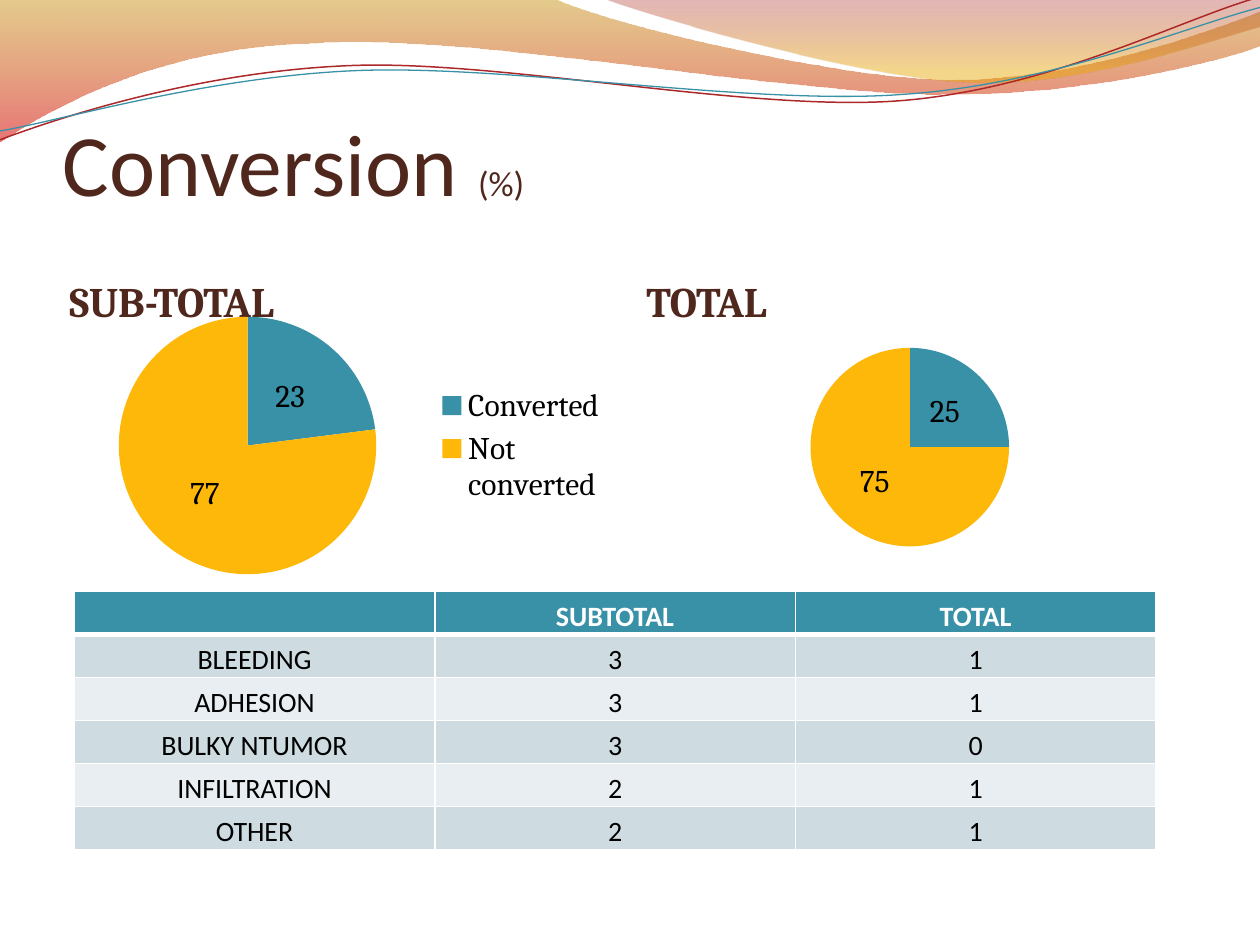
from lxml.etree import SubElement
from pptx import Presentation
from pptx.chart.data import CategoryChartData
from pptx.dml.color import RGBColor
from pptx.enum.chart import XL_CHART_TYPE, XL_LABEL_POSITION, XL_LEGEND_POSITION
from pptx.enum.text import MSO_ANCHOR, PP_ALIGN
from pptx.oxml import parse_xml
from pptx.oxml.ns import nsdecls, qn
from pptx.util import Pt

COLORS = {
    "teal": "3891A7", "amber": "FEB80A", "brown": "4F271C", "red": "AC2829",
    "row_dark": "CEDCE1", "row_light": "E8EEF1", "white": "FFFFFF", "black": "000000",
    "ochre": "C38B00", "scarlet": "D60305", "wine": "A11112", "gold": "E9A600",
}

# Each outline is a start point, then segments: one point is a line,
# three points are a cubic curve (two controls and an end).
BANDS = [
    {"start": (0, 0),
     "segments": [
         [(316.8, -0.7)],
         [(342.7, 12.2), (478.1, 45.4), (545.8, 45.4)],
         [(614.2, 45.4), (689.8, 18.7), (720, 6.5)],
         [(720.7, 25.9)],
         [(707.8, 31.7), (626.4, 54.7), (537.1, 54)],
         [(447.8, 54), (275, 20.2), (185, 24.5)],
         [(92.9, 25.9), (33.1, 59.8), (-0.7, 81.4)]],
     "stops": [(0, "ochre", 45), (1, "scarlet", 55)]},
    {"start": (344.9, -0.7),
     "segments": [
         [(366.5, 7.9), (491, 44.6), (553.7, 46.8)],
         [(616.3, 49.7), (691.9, 23), (720, 15.1)],
         [(720, 0)]],
     "stops": [(0, "wine", 30), (0.8, "gold", 45)]},
]
WAVE_TILT = -2.7
WAVES = [
    {"start": (-1.4, 62.9), "color": "red", "width": 0.85,
     "segments": [
         [(33.7, 51.6), (114, 29.4), (199.8, 30)],
         [(284.8, 30.3), (425.8, 67.2), (512.4, 64.9)],
         [(599, 62.4), (676.4, 25.7), (720.2, 15.6)]]},
    {"start": (-1.2, 57.9), "color": "teal", "width": 0.75,
     "segments": [
         [(33, 53.8), (118.3, 32.5), (204, 33)],
         [(290.5, 33.5), (428.9, 63.8), (515.5, 61.3)],
         [(601.3, 59.6), (678.5, 30.1), (721.4, 21.3)]]},
]

LEFT, RIGHT, HALF_WIDTH = 36, 365.8, 318.2
TITLE = [("Conversion ", 50), ("(%)", 20)]
HEADINGS = [("SUB-TOTAL", LEFT), ("TOTAL", RIGHT)]
PIES = [
    {"box": (LEFT, 171.1, HALF_WIDTH, 167), "legend": True, "plot": None,
     "categories": ["Converted", "Not converted"], "values": [23, 77]},
    {"box": (RIGHT, 179.3, HALF_WIDTH, 136), "legend": False,
     "plot": (6, 19.5, 296.2, 113.5),
     "categories": ["1", "2"], "values": [25, 75]},
]
REASONS = [
    ("", "SUBTOTAL", "TOTAL"),
    ("BLEEDING", "3", "1"),
    ("ADHESION", "3", "1"),
    ("BULKY NTUMOR", "3", "0"),
    ("INFILTRATION", "2", "1"),
    ("OTHER", "2", "1"),
]
TABLE_LEFT, TABLE_TOP, COLUMN_WIDTH, ROW_HEIGHT = 42.5, 337.9, 206, 24.6


def rgb(name):
    return RGBColor.from_string(COLORS[name])


def add_outline(slide, outline, close):
    """Build the outline through all its points, then join each three into a curve."""
    segments = outline["segments"]
    x, y = outline["start"]
    builder = slide.shapes.build_freeform(Pt(x), Pt(y))
    builder.add_line_segments([(Pt(x), Pt(y)) for segment in segments for x, y in segment],
                              close=close)
    shape = builder.convert_to_shape()
    shape.shadow.inherit = False
    lines = iter(list(shape._element.iter(qn("a:lnTo"))))
    for segment in segments:
        first, *others = [next(lines) for _ in segment]
        if others:
            first.tag = qn("a:cubicBezTo")
            for line in others:
                first.append(line[0])
                line.getparent().remove(line)
    return shape


def add_band(slide, band):
    shape = add_outline(slide, band, close=True)
    shape.line.fill.background()
    shape.fill.gradient()
    shape.fill.gradient_angle = 270
    for stop, (position, color, _) in zip(shape.fill.gradient_stops, band["stops"]):
        stop.position = position
        stop.color.rgb = rgb(color)
    for color_xml, (_, _, opacity) in zip(shape._element.iter(qn("a:srgbClr")), band["stops"]):
        SubElement(color_xml, qn("a:alpha"), val=str(opacity * 1000))


def add_wave(slide, wave):
    shape = add_outline(slide, wave, close=False)
    shape.rotation = WAVE_TILT
    shape.fill.background()
    shape.line.color.rgb = rgb(wave["color"])
    shape.line.width = Pt(wave["width"])


def add_run(paragraph, text, size, font, color, bold=False):
    run = paragraph.add_run()
    run.text = text
    run.font.size, run.font.name, run.font.bold = Pt(size), font, bold
    run.font.color.rgb = rgb(color)


def add_text(slide, box, runs, font, anchor, insets, bold=False):
    frame = slide.shapes.add_textbox(*map(Pt, box)).text_frame
    frame.word_wrap = True
    frame.vertical_anchor = anchor
    frame.margin_left, frame.margin_top, frame.margin_right, frame.margin_bottom = map(Pt, insets)
    for text, size in runs:
        add_run(frame.paragraphs[0], text, size, font, "brown", bold)


def place_plot(chart, plot_box, chart_box):
    """Fix the inner plot area, given in points from the chart's corner."""
    area = chart._chartSpace.find(".//" + qn("c:plotArea"))
    for old in area.findall(qn("c:layout")):
        area.remove(old)
    width, height = chart_box[2:]
    shares = [length / whole for length, whole in zip(plot_box, (width, height) * 2)]
    settings = [("layoutTarget", "inner"), ("xMode", "edge"), ("yMode", "edge"),
                *zip("xywh", shares)]
    inner = "".join(f'<c:{tag} val="{value}"/>' for tag, value in settings)
    area.insert(0, parse_xml(f'<c:layout {nsdecls("c")}><c:manualLayout>{inner}'
                             "</c:manualLayout></c:layout>"))


def add_pie(slide, pie):
    data = CategoryChartData()
    data.categories = pie["categories"]
    data.add_series("Series 1", pie["values"])
    chart = slide.shapes.add_chart(XL_CHART_TYPE.PIE, *map(Pt, pie["box"]), data).chart
    chart.has_title = False
    chart.font.size, chart.font.name = Pt(18), "Cambria"
    chart.font.color.rgb = rgb("black")
    chart.has_legend = pie["legend"]
    if pie["legend"]:
        chart.legend.position = XL_LEGEND_POSITION.RIGHT
        chart.legend.include_in_layout = False
    plot = chart.plots[0]
    plot.vary_by_categories = True
    plot.has_data_labels = True
    plot.data_labels.show_value = True
    plot.data_labels.show_percentage = False
    plot.data_labels.position = XL_LABEL_POSITION.CENTER
    for index, color in enumerate(("teal", "amber")):
        fill = plot.series[0].points[index].format.fill
        fill.solid()
        fill.fore_color.rgb = rgb(color)
    if pie["plot"]:
        place_plot(chart, pie["plot"], pie["box"])


def style_cell(cell, text, row):
    header = row == 0
    widths = {"L": 1, "R": 1, "T": 3 if row == 1 else 1, "B": 3 if header else 1}
    properties = cell._tc.get_or_add_tcPr()
    for side, width in widths.items():
        border = SubElement(properties, qn(f"a:ln{side}"), w=str(Pt(width)))
        SubElement(SubElement(border, qn("a:solidFill")), qn("a:srgbClr"), val=COLORS["white"])
    cell.fill.solid()
    cell.fill.fore_color.rgb = rgb("teal" if header else "row_dark" if row % 2 else "row_light")
    cell.vertical_anchor = MSO_ANCHOR.BOTTOM
    cell.margin_left = cell.margin_right = Pt(5.2)
    cell.margin_top = cell.margin_bottom = 0
    if text:
        paragraph = cell.text_frame.paragraphs[0]
        paragraph.alignment = PP_ALIGN.CENTER
        paragraph.line_spacing = 1.15
        add_run(paragraph, text, 16, "Calibri", "white" if header else "black", header)


def add_reasons(slide):
    rows, columns = len(REASONS), len(REASONS[0])
    table = slide.shapes.add_table(rows, columns, Pt(TABLE_LEFT), Pt(TABLE_TOP),
                                   Pt(COLUMN_WIDTH * columns), Pt(ROW_HEIGHT * rows)).table
    for column in table.columns:
        column.width = Pt(COLUMN_WIDTH)
    for row, texts in enumerate(REASONS):
        table.rows[row].height = Pt(ROW_HEIGHT)
        for column, text in enumerate(texts):
            style_cell(table.cell(row, column), text, row)


def main():
    deck = Presentation()
    deck.slide_width, deck.slide_height = Pt(720), Pt(540)
    slide = deck.slides.add_slide(deck.slide_layouts[6])
    for band in BANDS:
        add_band(slide, band)
    for wave in WAVES:
        add_wave(slide, wave)
    add_text(slide, (LEFT, 55.4, 648, 67), TITLE, "Calibri", MSO_ANCHOR.BOTTOM, (0, 3.6, 0, 0))
    for heading, left in HEADINGS:
        add_text(slide, (left, 146, HALF_WIDTH, 51.8), [(heading, 24)], "Cambria",
                 MSO_ANCHOR.MIDDLE, (3.6, 0, 3.6, 0), bold=True)
    for pie in PIES:
        add_pie(slide, pie)
    add_reasons(slide)
    deck.save("out.pptx")


if __name__ == "__main__":
    main()
